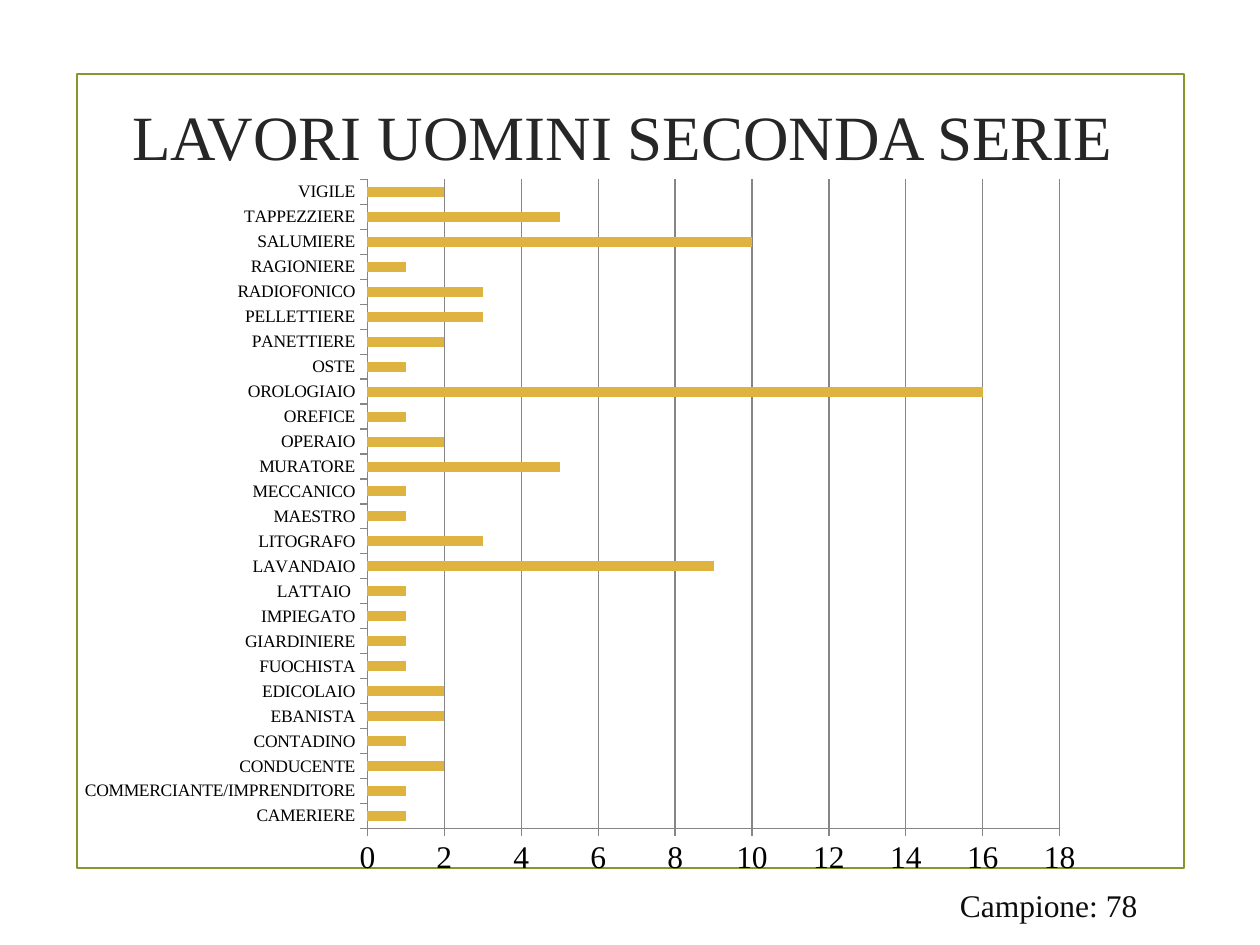
from pptx import Presentation
from pptx.chart.data import CategoryChartData
from pptx.dml.color import RGBColor
from pptx.enum.chart import XL_CHART_TYPE as ChartType, XL_TICK_MARK as TickMark
from pptx.enum.shapes import MSO_SHAPE as Shape
from pptx.enum.text import MSO_ANCHOR as Anchor, PP_ALIGN as Align
from pptx.util import Inches, Pt

FONT = "Times New Roman"
GREEN = RGBColor(0x83, 0x99, 0x2A)
GOLD = RGBColor(0xDE, 0xB3, 0x40)
GRAY = RGBColor(0x86, 0x86, 0x86)
BLACK = RGBColor(0, 0, 0)
TITLE_COLOR = RGBColor(0x26, 0x26, 0x26)
NOTE_COLOR = RGBColor(0x0D, 0x0D, 0x0D)

JOBS = {
    "CAMERIERE": 1, "COMMERCIANTE/IMPRENDITORE": 1, "CONDUCENTE": 2,
    "CONTADINO": 1, "EBANISTA": 2, "EDICOLAIO": 2, "FUOCHISTA": 1,
    "GIARDINIERE": 1, "IMPIEGATO": 1, "LATTAIO ": 1, "LAVANDAIO": 9,
    "LITOGRAFO": 3, "MAESTRO": 1, "MECCANICO": 1, "MURATORE": 5,
    "OPERAIO": 2, "OREFICE": 1, "OROLOGIAIO": 16, "OSTE": 1,
    "PANETTIERE": 2, "PELLETTIERE": 3, "RADIOFONICO": 3, "RAGIONIERE": 1,
    "SALUMIERE": 10, "TAPPEZZIERE": 5, "VIGILE": 2,
}


def style_font(font, size, color):
    font.name = FONT
    font.size = Pt(size)
    font.color.rgb = color


prs = Presentation()
prs.slide_width, prs.slide_height = Inches(10), Inches(7.5)
slide = prs.slides.add_slide(prs.slide_layouts[5])

# Frame, placed behind the title
frame = slide.shapes.add_shape(
    Shape.RECTANGLE, Inches(0.61), Inches(0.59), Inches(8.79), Inches(6.3))
frame.shadow.inherit = False
frame.fill.background()
frame.line.color.rgb = GREEN
frame.line.width = Pt(1.25)

title = slide.shapes.title
frame.element.getparent().append(title.element)
title.left, title.top = Inches(0.51), Inches(0.44)
title.width, title.height = Inches(8.86), Inches(1.26)
title.text_frame.text = "LAVORI UOMINI SECONDA SERIE"
title.text_frame.vertical_anchor = Anchor.MIDDLE
heading = title.text_frame.paragraphs[0]
heading.alignment = Align.CENTER
style_font(heading.font, 36, TITLE_COLOR)

sample_note = slide.shapes.add_textbox(
    Inches(7.52), Inches(6.98), Inches(2.13), Inches(0.71)).text_frame
sample_note.word_wrap = True
sample_note.text = "Campione: 78"
style_font(sample_note.paragraphs[0].font, 18, NOTE_COLOR)

# Bar chart of jobs
job_data = CategoryChartData()
job_data.categories = JOBS.keys()
job_data.add_series("Series 1", JOBS.values())
chart = slide.shapes.add_chart(
    ChartType.BAR_CLUSTERED, Inches(0.51), Inches(1.31), Inches(8.19),
    Inches(5.75), job_data).chart
chart.has_legend = False
chart.has_title = False
style_font(chart.font, 18, BLACK)

plot = chart.plots[0]
plot.gap_width = 150
plot.vary_by_categories = False
bars = plot.series[0].format.fill
bars.solid()
bars.fore_color.rgb = GOLD

for axis, size in ((chart.category_axis, 10), (chart.value_axis, 18)):
    axis.major_tick_mark = TickMark.OUTSIDE
    axis.minor_tick_mark = TickMark.NONE
    axis.format.line.color.rgb = GRAY
    style_font(axis.tick_labels.font, size, BLACK)

counts = chart.value_axis
counts.minimum_scale, counts.maximum_scale, counts.major_unit = 0, 18, 2
counts.has_major_gridlines = True
counts.major_gridlines.format.line.color.rgb = GRAY

prs.save("out.pptx")
